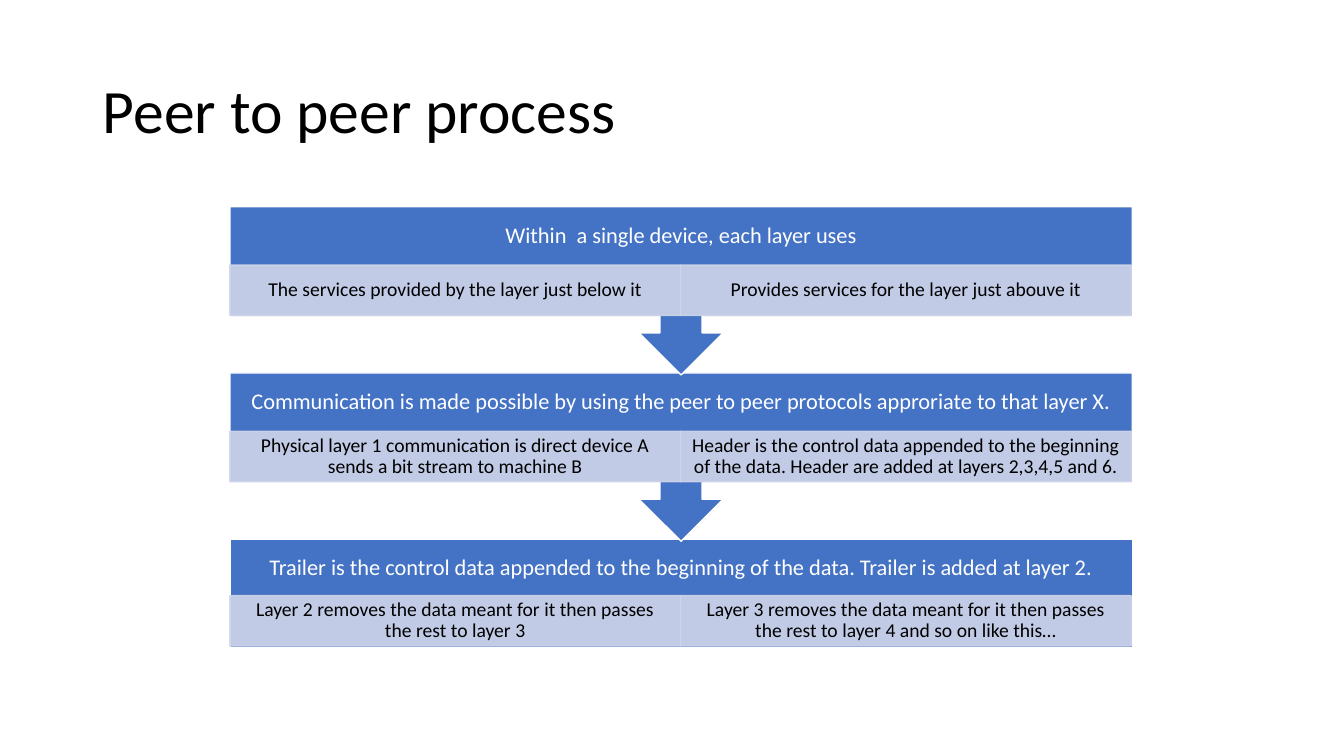
from dataclasses import dataclass

from lxml import etree
from pptx import Presentation
from pptx.dml.color import RGBColor
from pptx.enum.shapes import MSO_SHAPE
from pptx.enum.text import MSO_ANCHOR, PP_ALIGN
from pptx.oxml.ns import qn
from pptx.util import Emu, Pt

RECT = MSO_SHAPE.RECTANGLE
CALLOUT = MSO_SHAPE.UP_ARROW_CALLOUT
MIDDLE = MSO_ANCHOR.MIDDLE
LEFT, CENTER = PP_ALIGN.LEFT, PP_ALIGN.CENTER

BLACK = RGBColor(0x00, 0x00, 0x00)
WHITE = RGBColor(0xFF, 0xFF, 0xFF)
BLUE = RGBColor(0x44, 0x72, 0xC4)
PALE_BLUE = RGBColor(0xCF, 0xD5, 0xEA)

FONT = "Calibri"
TITLE_ONLY = 5
EMU_PER_PX = 9144  # 100 px to the inch

BLOCK_LEFT, BLOCK_TOP, BLOCK_WIDTH = 228, 205, 895
BLOCK_PITCH = 165
CALLOUT_HEIGHT, LAST_HEIGHT = 167, 108
HEADING_HEIGHT, CELL_HEIGHT = 58, 50


@dataclass
class Block:
    heading: str
    details: tuple[str, ...]
    shape: MSO_SHAPE = CALLOUT
    height: int = CALLOUT_HEIGHT
    rotation: int = 180
    cell_offset: int = 58


BLOCKS = [
    Block("Within  a single device, each layer uses",
          ("The services provided by the layer just below it",
           "Provides services for the layer just abouve it")),
    Block("Communication is made possible by using the peer to peer protocols "
          "approriate to that layer X.",
          ("Physical layer 1 communication is direct device A sends a bit stream "
           "to machine B",
           "Header is the control data appended to the beginning of the data. "
           "Header are added at layers 2,3,4,5 and 6.")),
    Block("Trailer is the control data appended to the beginning of the data. "
          "Trailer is added at layer 2.",
          ("Layer 2 removes the data meant for it then passes the rest to layer 3",
           "Layer 3 removes the data meant for it then passes the rest to layer 4 "
           "and so on like this…"),
          RECT, LAST_HEIGHT, 0, 56),
]


def px(*lengths: int) -> list[Emu]:
    return [Emu(n * EMU_PER_PX) for n in lengths]


def write(sp, text: str, size: int, color: RGBColor, align=CENTER,
          margins: tuple[int, int] = (10, 5)) -> None:
    """Put one formatted paragraph in sp; margins are horizontal and vertical px."""
    tf = sp.text_frame
    tf.word_wrap = True
    tf.vertical_anchor = MIDDLE
    horizontal, vertical = px(*margins)
    tf.margin_left = tf.margin_right = horizontal
    tf.margin_top = tf.margin_bottom = vertical
    tf.text = text
    p = tf.paragraphs[0]
    p.alignment = align
    p.line_spacing = 0.9
    font = p.runs[0].font
    font.name, font.size = FONT, Pt(size)
    font.color.rgb = color


def add_panel(s, kind: MSO_SHAPE, box: tuple[int, int, int, int],
              fill: RGBColor, line: RGBColor):
    sp = s.shapes.add_shape(kind, *px(*box))
    sp.shadow.inherit = False
    sp.fill.solid()
    sp.fill.fore_color.rgb = fill
    sp.line.color.rgb = line
    sp.line.width = Pt(1)
    return sp


def set_opacity(sp, percent: int) -> None:
    """Apply the opacity to both the fill and the line of sp."""
    for color in sp._element.spPr.iter(qn("a:srgbClr")):
        etree.SubElement(color, qn("a:alpha")).set("val", str(percent * 1000))


def add_block(s, block: Block, top: int) -> None:
    panel = add_panel(s, block.shape, (BLOCK_LEFT, top, BLOCK_WIDTH, block.height),
                      BLUE, WHITE)
    panel.rotation = block.rotation
    heading = s.shapes.add_textbox(*px(BLOCK_LEFT, top, BLOCK_WIDTH, HEADING_HEIGHT))
    write(heading, block.heading, 16, WHITE, margins=(12, 12))

    cell_width = BLOCK_WIDTH // len(block.details)
    for column, detail in enumerate(block.details):
        box = (BLOCK_LEFT + column * cell_width, top + block.cell_offset,
               cell_width, CELL_HEIGHT)
        cell = add_panel(s, RECT, box, PALE_BLUE, PALE_BLUE)
        set_opacity(cell, 90)
        write(cell, detail, 14, BLACK, margins=(11, 2))


def main() -> None:
    prs = Presentation()
    prs.slide_width, prs.slide_height = px(1333, 750)
    s = prs.slides.add_slide(prs.slide_layouts[TITLE_ONLY])

    title = s.shapes.title
    title.left, title.top, title.width, title.height = px(92, 40, 1150, 145)
    write(title, "Peer to peer process", 44, BLACK, LEFT)

    # Last block first, so that each arrow tip lies over the block below it.
    for row, block in reversed(list(enumerate(BLOCKS))):
        add_block(s, block, BLOCK_TOP + row * BLOCK_PITCH)

    prs.save("out.pptx")


if __name__ == "__main__":
    main()
